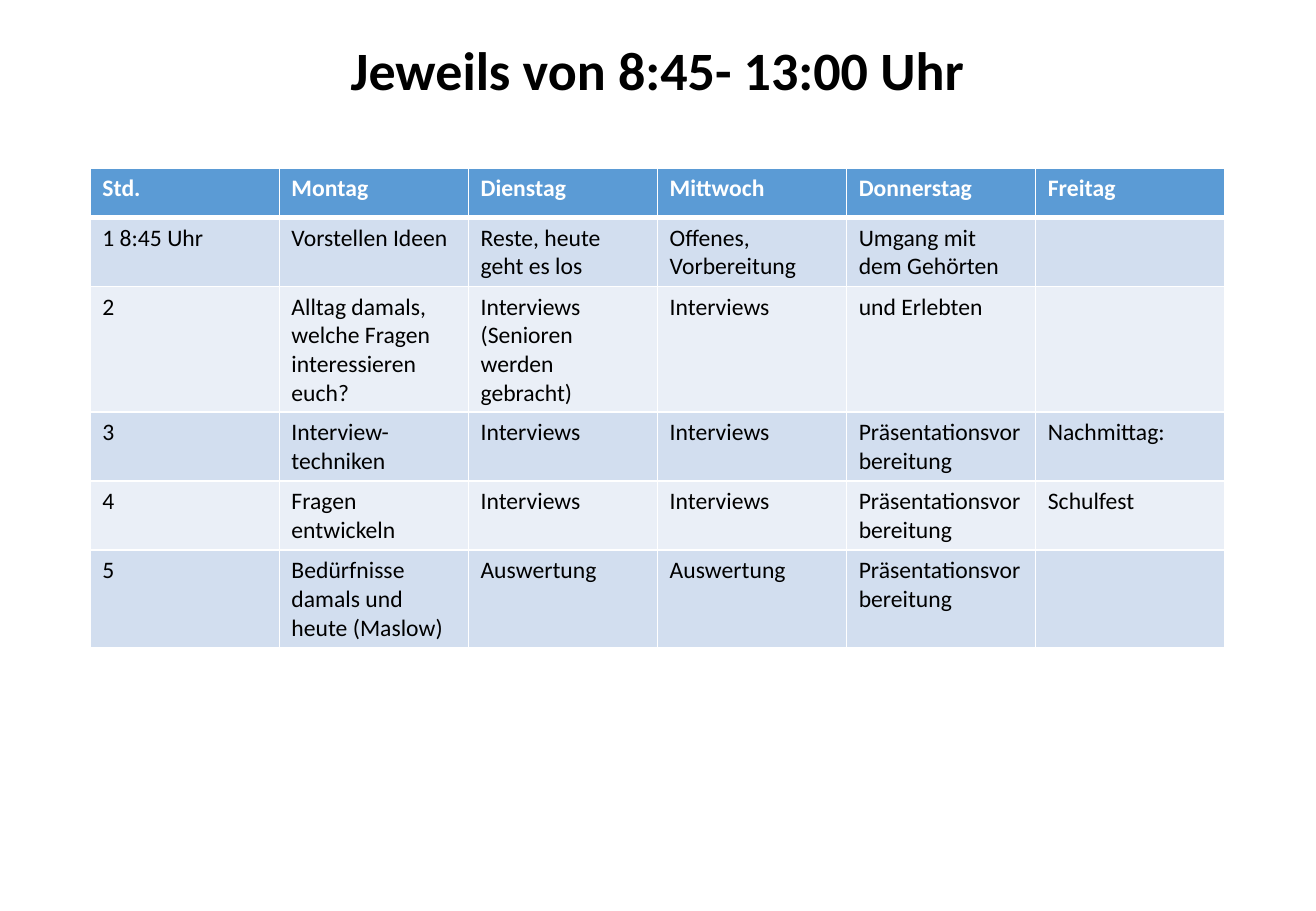
from lxml.etree import SubElement as Sub
from pptx import Presentation
from pptx.dml.color import RGBColor
from pptx.enum.text import MSO_ANCHOR as Anchor, PP_ALIGN as Align
from pptx.oxml.ns import qn
from pptx.util import Pt

BLACK = RGBColor(0, 0, 0)
WHITE = RGBColor(255, 255, 255)
BLUE = RGBColor(0x5B, 0x9B, 0xD5)
BANDS = [RGBColor(0xEA, 0xEF, 0xF7), RGBColor(0xD2, 0xDE, 0xEF)]

LEFT, WIDTH = 53.5, 672.5
ROW = 29.4
THIN, THICK = 1, 3

TITLE = {"name": "Calibri", "size": Pt(32), "bold": True}
HEAD = {"name": "Calibri", "size": Pt(14), "bold": True}
BODY = {"name": "Calibri", "size": Pt(14), "bold": False}

PLAN = [
    ["Std.", "Montag", "Dienstag", "Mittwoch", "Donnerstag", "Freitag"],
    ["1 8:45 Uhr", "Vorstellen Ideen", "Reste, heute geht es los",
     "Offenes, Vorbereitung", "Umgang mit dem Gehörten", ""],
    ["2", "Alltag damals, welche Fragen interessieren euch?",
     "Interviews (Senioren werden gebracht)", "Interviews", "und Erlebten", ""],
    ["3", "Interview-techniken", "Interviews", "Interviews",
     "Präsentationsvorbereitung", "Nachmittag:"],
    ["4", "Fragen entwickeln", "Interviews", "Interviews",
     "Präsentationsvorbereitung", "Schulfest"],
    ["5", "Bedürfnisse damals und heute (Maslow)", "Auswertung", "Auswertung",
     "Präsentationsvorbereitung", ""],
]


def set_font(font, form, color):
    for key, value in form.items():
        setattr(font, key, value)
    font.color.rgb = color


def add_title(slide, text):
    box = slide.shapes.add_textbox(Pt(LEFT), Pt(12.2), Pt(WIDTH), Pt(62))
    frame = box.text_frame
    frame.word_wrap = True
    frame.vertical_anchor = Anchor.MIDDLE
    para = frame.paragraphs[0]
    para.text = text
    para.alignment = Align.CENTER
    para.line_spacing = 0.9
    set_font(para.font, TITLE, BLACK)


def add_edges(cell, top, base):
    props = cell._tc.get_or_add_tcPr()
    sides = {"a:lnL": THIN, "a:lnR": THIN, "a:lnT": top, "a:lnB": base}
    for side, width in sides.items():
        line = Sub(props, qn(side), w=str(Pt(width)))
        fill = Sub(line, qn("a:solidFill"))
        Sub(fill, qn("a:srgbClr"), val=str(WHITE))


def fill_cell(cell, text, row):
    add_edges(cell, THICK if row == 1 else THIN, THIN if row else THICK)
    cell.fill.solid()
    cell.fill.fore_color.rgb = BANDS[row % 2] if row else BLUE
    para = cell.text_frame.paragraphs[0]
    para.text = text
    set_font(para.font, BODY if row else HEAD, BLACK if row else WHITE)


def add_plan(slide, plan):
    rows, cols = len(plan), len(plan[0])
    frame = slide.shapes.add_table(
        rows, cols, Pt(LEFT), Pt(99.6), Pt(WIDTH), Pt(ROW * rows))
    for row, texts in enumerate(plan):
        for col, text in enumerate(texts):
            fill_cell(frame.table.cell(row, col), text, row)


def main():
    deck = Presentation()
    deck.slide_width, deck.slide_height = Pt(780), Pt(540)
    slide = deck.slides.add_slide(deck.slide_layouts[6])
    add_title(slide, "Jeweils von 8:45- 13:00 Uhr")
    add_plan(slide, PLAN)
    deck.save("out.pptx")


if __name__ == "__main__":
    main()
